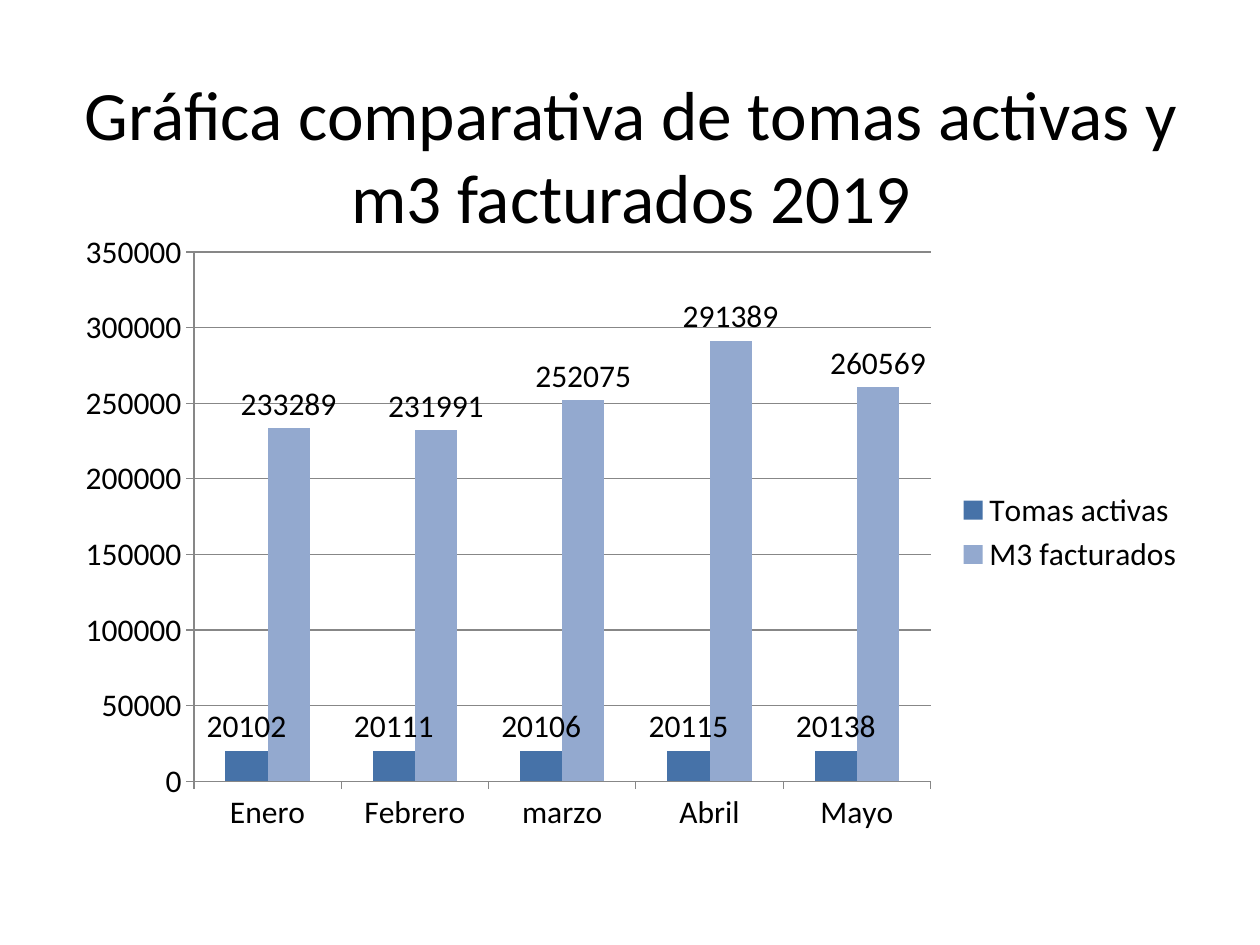
from dataclasses import dataclass

from lxml import etree
from pptx import Presentation
from pptx.chart import data as chart_data
from pptx.dml.color import RGBColor
from pptx.enum import chart as ch, text
from pptx.util import Inches, Pt


@dataclass(frozen=True)
class Theme:
    font: str = "Calibri"
    title_size: float = 39.6
    chart_size: float = 18
    ink: RGBColor = RGBColor(0x00, 0x00, 0x00)
    rule: RGBColor = RGBColor(0x87, 0x87, 0x87)
    bars: tuple = (RGBColor(0x46, 0x72, 0xA8), RGBColor(0x93, 0xA9, 0xCF))


THEME = Theme()
MONTHS = ("Enero", "Febrero", "marzo", "Abril", "Mayo")
SERIES = {
    "Tomas activas": (20102, 20111, 20106, 20115, 20138),
    "M3 facturados": (233289, 231991, 252075, 291389, 260569),
}


def style_font(font, size):
    font.name = THEME.font
    font.size = Pt(size)
    font.color.rgb = THEME.ink


def add_title(page, wording, left, top, width, height):
    box = page.shapes.add_textbox(*map(Inches, (left, top, width, height)))
    frame = box.text_frame
    frame.word_wrap = True
    frame.vertical_anchor = text.MSO_ANCHOR.MIDDLE
    para = frame.paragraphs[0]
    para.alignment = text.PP_ALIGN.CENTER
    span = para.add_run()
    span.text = wording
    style_font(span.font, THEME.title_size)


def style_line(line):
    line.color.rgb = THEME.rule
    line.width = Pt(0.75)


def style_axes(chart):
    for axis in (chart.category_axis, chart.value_axis):
        axis.major_tick_mark = ch.XL_TICK_MARK.OUTSIDE
        axis.minor_tick_mark = ch.XL_TICK_MARK.NONE
        style_line(axis.format.line)
    values = chart.value_axis
    values.minimum_scale = 0
    values.maximum_scale = 350000
    values.major_unit = 50000
    values.has_major_gridlines = True
    style_line(values.major_gridlines.format.line)


def style_series(plot):
    plot.gap_width = 150
    plot.vary_by_categories = False
    for series, color in zip(plot.series, THEME.bars):
        series.format.fill.solid()
        series.format.fill.fore_color.rgb = color
        labels = series.data_labels
        labels.show_value = True
        labels.position = ch.XL_LABEL_POSITION.OUTSIDE_END
        style_font(labels.font, THEME.chart_size)


def add_column_chart(page, left, top, width, height):
    content = chart_data.CategoryChartData()
    content.categories = MONTHS
    for name, values in SERIES.items():
        content.add_series(name, values)
    frame = page.shapes.add_chart(
        ch.XL_CHART_TYPE.COLUMN_CLUSTERED,
        *map(Inches, (left, top, width, height)),
        content,
    )
    chart = frame.chart
    chart.has_title = False
    style_font(chart.font, THEME.chart_size)
    chart.has_legend = True
    chart.legend.position = ch.XL_LEGEND_POSITION.RIGHT
    chart.legend.include_in_layout = False
    style_axes(chart)
    style_series(chart.plots[0])


def main():
    deck = Presentation()
    deck.slide_width, deck.slide_height = Inches(10), Inches(7.5)
    page = deck.slides.add_slide(deck.slide_layouts[6])
    add_title(
        page,
        "Gráfica comparativa de tomas activas y m3 facturados 2019",
        0.51, 0.6, 9, 1.25,
    )
    add_column_chart(page, 0.5, 1.75, 9, 4.95)
    deck.save("out.pptx")


if __name__ == "__main__":
    main()
